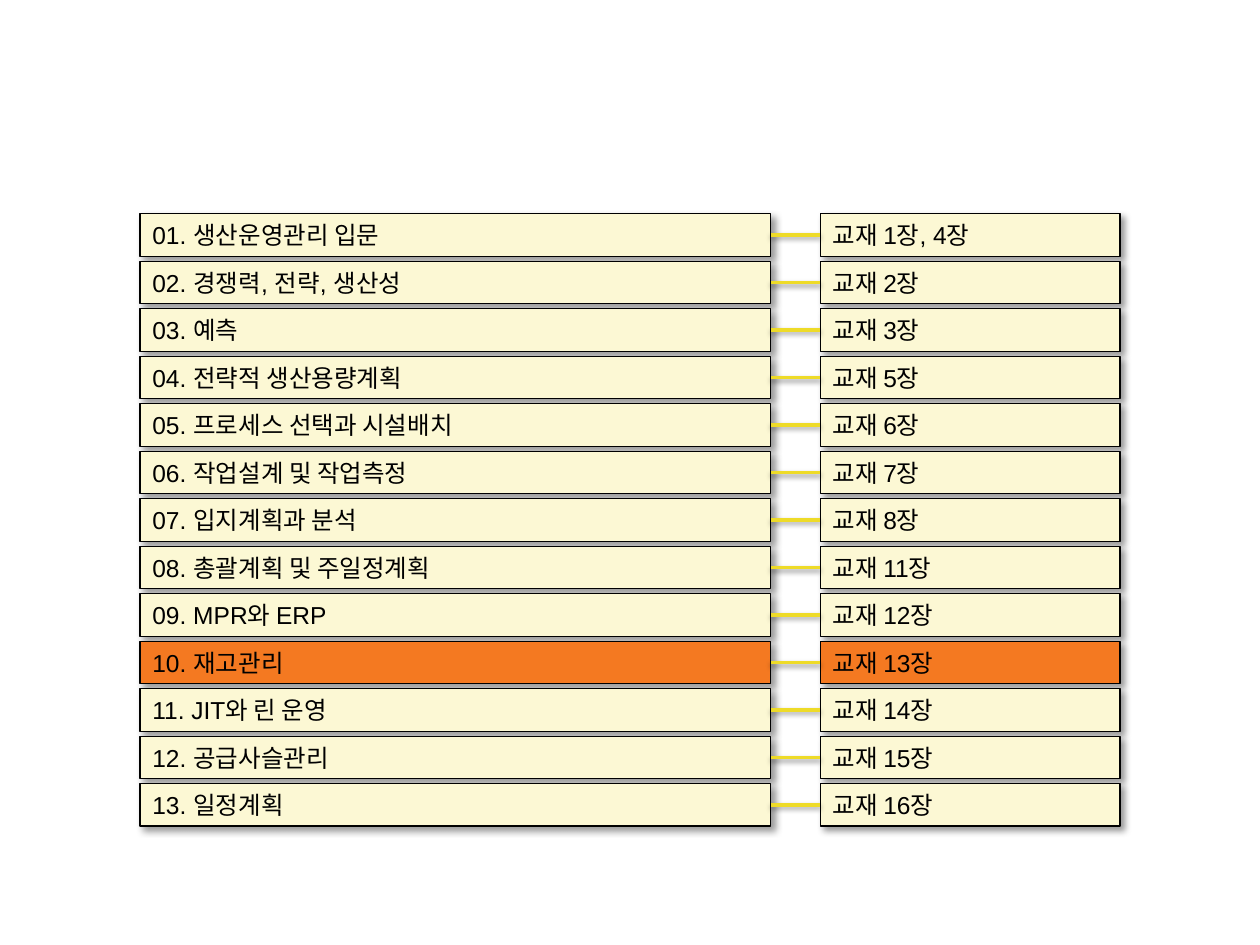
from dataclasses import dataclass

from lxml.etree import SubElement
from pptx import Presentation
from pptx.dml.color import RGBColor
from pptx.enum.shapes import MSO_CONNECTOR as Connector, MSO_SHAPE as Shape
from pptx.enum.text import MSO_ANCHOR as Anchor, MSO_AUTO_SIZE as AutoSize, PP_ALIGN as Align
from pptx.oxml.ns import qn
from pptx.util import Pt


@dataclass(frozen=True)
class Theme:
    font: str = "Arial"
    text_size: float = 14
    text: RGBColor = RGBColor.from_string("000000")
    outline: RGBColor = RGBColor.from_string("000000")
    row: RGBColor = RGBColor.from_string("FCF8D4")
    current_row: RGBColor = RGBColor.from_string("F47921")
    link: RGBColor = RGBColor.from_string("EEDB28")
    shadow: str = "000000"


theme = Theme()

CHAPTERS = [
    ("01. 생산운영관리 입문", "교재 1장, 4장"),
    ("02. 경쟁력, 전략, 생산성", "교재 2장"),
    ("03. 예측", "교재 3장"),
    ("04. 전략적 생산용량계획", "교재 5장"),
    ("05. 프로세스 선택과 시설배치", "교재 6장"),
    ("06. 작업설계 및 작업측정", "교재 7장"),
    ("07. 입지계획과 분석", "교재 8장"),
    ("08. 총괄계획 및 주일정계획", "교재 11장"),
    ("09. MPR와 ERP", "교재 12장"),
    ("10. 재고관리", "교재 13장"),
    ("11. JIT와 린 운영", "교재 14장"),
    ("12. 공급사슬관리", "교재 15장"),
    ("13. 일정계획", "교재 16장"),
]
CURRENT = 9
TOP, PITCH, HEIGHT = 122.2, 27.14, 24.24
TOPIC_LEFT, TOPIC_WIDTH = 80, 360.5
BOOK_LEFT, BOOK_WIDTH = 468.7, 171.3


def add_shadow(shape, opacity, blur, distance, angle):
    """Give a shape or connector an outer shadow: percent, points, points, degrees."""
    effects = SubElement(shape._element.spPr, qn("a:effectLst"))
    outer = SubElement(effects, qn("a:outerShdw"), blurRad=str(Pt(blur)),
                       dist=str(Pt(distance)), dir=str(angle * 60000), rotWithShape="0")
    color = SubElement(outer, qn("a:srgbClr"), val=theme.shadow)
    SubElement(color, qn("a:alpha"), val=str(opacity * 1000))


def add_box(slide, left, top, width, text, fill):
    box = slide.shapes.add_shape(Shape.RECTANGLE, Pt(left), Pt(top), Pt(width), Pt(HEIGHT))
    box.fill.solid()
    box.fill.fore_color.rgb = fill
    box.line.color.rgb = theme.outline
    box.line.width = Pt(0.75)
    add_shadow(box, 40, 4, 3, 45)
    frame = box.text_frame
    frame.word_wrap = True
    frame.auto_size = AutoSize.SHAPE_TO_FIT_TEXT
    frame.vertical_anchor = Anchor.MIDDLE
    paragraph = frame.paragraphs[0]
    paragraph.alignment = Align.LEFT
    run = paragraph.add_run()
    run.text = text
    run.font.name = theme.font
    run.font.size = Pt(theme.text_size)
    run.font.color.rgb = theme.text
    return box


presentation = Presentation()
presentation.slide_width, presentation.slide_height = Pt(720), Pt(540)
slide = presentation.slides.add_slide(presentation.slide_layouts[6])

for index, (topic, book) in enumerate(CHAPTERS):
    top = TOP + index * PITCH
    fill = theme.current_row if index == CURRENT else theme.row
    topic_box = add_box(slide, TOPIC_LEFT, top, TOPIC_WIDTH, topic, fill)
    book_box = add_box(slide, BOOK_LEFT, top, BOOK_WIDTH, book, fill)

    link = slide.shapes.add_connector(Connector.STRAIGHT, 0, 0, 0, 0)
    link.begin_connect(topic_box, 3)
    link.end_connect(book_box, 1)
    link.line.color.rgb = theme.link
    link.line.width = Pt(2)
    add_shadow(link, 38, 3.1, 1.6, 90)

presentation.save("out.pptx")
